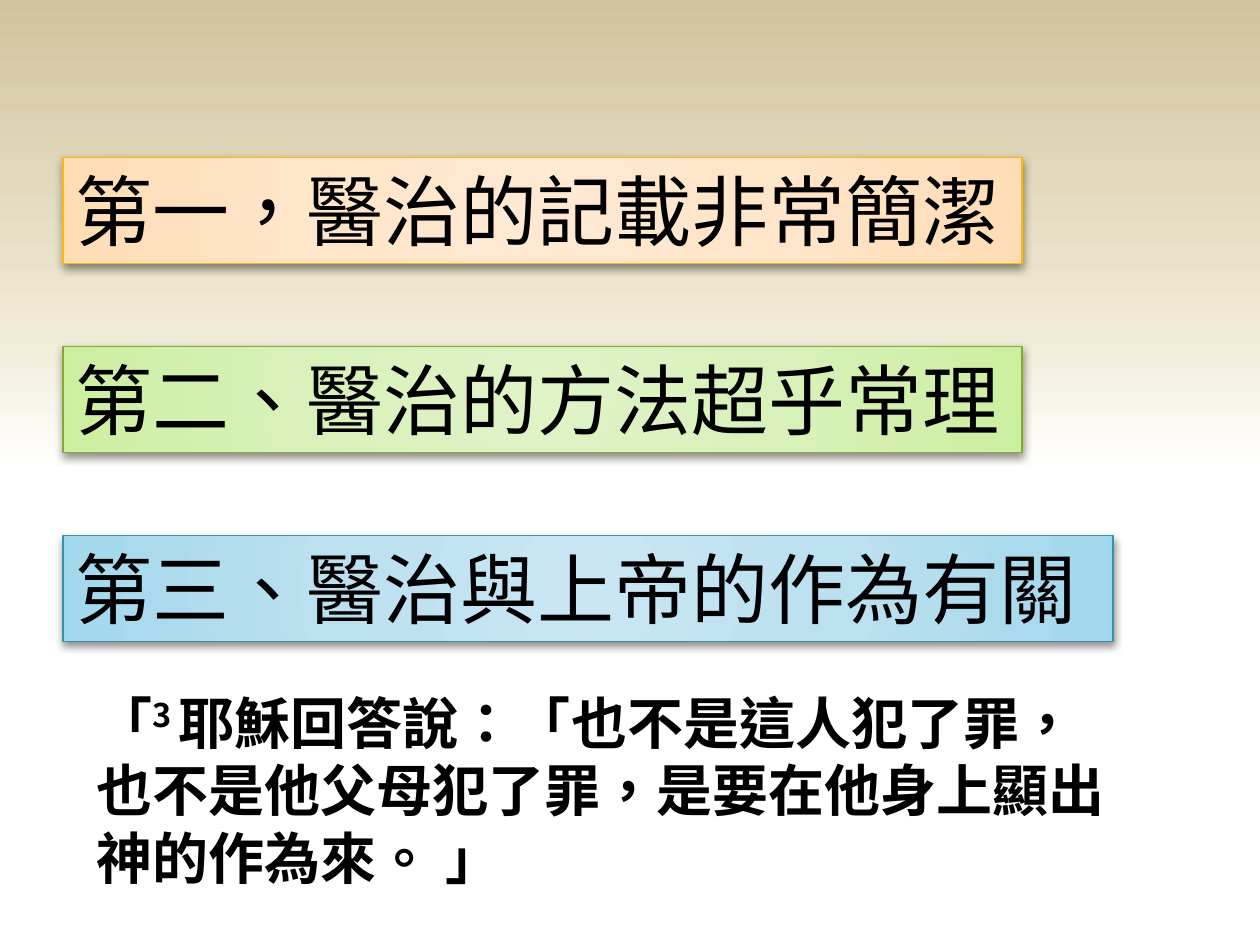
from lxml import etree
from pptx import Presentation
from pptx.dml.color import RGBColor
from pptx.enum import lang, shapes, text
from pptx.oxml import ns
from pptx.util import Pt

BLACK = RGBColor(0x00, 0x00, 0x00)
ORANGE = RGBColor(0xFE, 0xB8, 0x0A)
GREEN = RGBColor(0x84, 0xAA, 0x33)
BLUE = RGBColor(0x38, 0x91, 0xA7)


def shades(*codes):
    return [RGBColor.from_string(code) for code in codes]


SKY = shades("FFFFFF", "F0EBD5", "D1C39F")
PEACH = shades("FFE9D3", "FFE5C9", "FFDDB7", "FFDBB2")
LIME = shades("DFF3C7", "D8F1BA", "CDEFA2", "CAF199")
AQUA = shades("C9E6F2", "BBE0EF", "A4D8ED", "9BD7EE")

LEFT, TOP, STEP, HIGH = 36, 90, 108, 60.5
BARS = [
    ("第一，醫治的記載非常簡潔", 548, False, ORANGE, PEACH),
    ("第二、醫治的方法超乎常理", 548, False, GREEN, LIME),
    ("第三、醫治與上帝的作為有關", 600, True, BLUE, AQUA),
]
VERSE = [
    ("「", 0),
    ("3 ", 30000),
    ("耶穌回答說：「也不是這人犯了罪，也不是他父母犯了罪，是要在他身上顯出神的作為來。 」", 0),
]


def add(parent, tag, **attrs):
    node = etree.SubElement(parent, ns.qn(tag))
    for key, value in attrs.items():
        node.set(key, str(value))
    return node


def blend(owner, fill, spots, hues, angle=None):
    """Fill with a gradient: linear at the angle, else round from the centre."""
    fill.gradient()
    grad = next(owner.iter(ns.qn("a:gradFill")))
    for child in list(grad):
        grad.remove(child)
    stops = add(grad, "a:gsLst")
    for spot, hue in zip(spots, hues):
        stop = add(stops, "a:gs", pos=spot * 1000)
        add(stop, "a:srgbClr", val=hue)
    if angle is not None:
        add(grad, "a:lin", ang=angle * 60000, scaled=0)
    else:
        ring = add(grad, "a:path", path="circle")
        add(ring, "a:fillToRect", l=50000, t=50000, r=50000, b=50000)


def shade(shape):
    """Give the shape a soft shadow straight below it."""
    shape.shadow.inherit = False
    effects = next(shape._element.iter(ns.qn("a:effectLst")))
    drop = add(effects, "a:outerShdw", blurRad=Pt(5), dist=Pt(2),
               dir=90 * 60000, algn="ctr", rotWithShape=0)
    add(add(drop, "a:srgbClr", val=BLACK), "a:alpha", val=43000)


def write(shape, runs, wrap, **style):
    frame = shape.text_frame
    layout = {
        "word_wrap": wrap,
        "auto_size": text.MSO_AUTO_SIZE.SHAPE_TO_FIT_TEXT,
        "vertical_anchor": text.MSO_ANCHOR.TOP,
    }
    for key, value in layout.items():
        setattr(frame, key, value)
    para = frame.paragraphs[0]
    para.alignment = text.PP_ALIGN.LEFT
    style["language_id"] = lang.MSO_LANGUAGE_ID.TRADITIONAL_CHINESE
    for words, base in runs:
        run = para.add_run()
        run.text = words
        run.font.color.rgb = BLACK
        for key, value in style.items():
            setattr(run.font, key, value)
        if base:
            run.font._element.set("baseline", str(base))


def bar(slide, top, words, width, wrap, edge, hues):
    box = slide.shapes.add_shape(shapes.MSO_SHAPE.RECTANGLE,
                                 Pt(LEFT), Pt(top), Pt(width), Pt(HIGH))
    blend(box._element, box.fill, (0, 50, 97, 100), hues)
    box.line.color.rgb = edge
    box.line.width = Pt(0.75)
    shade(box)
    write(box, [(words, 0)], wrap, size=Pt(44), name="Calibri")


def verse(slide):
    box = slide.shapes.add_textbox(Pt(48), Pt(390), Pt(594), Pt(124))
    write(box, VERSE, True, size=Pt(32), name="Noto Sans CJK SC", bold=True)


def main():
    deck = Presentation()
    deck.slide_width, deck.slide_height = Pt(720), Pt(540)
    slide = deck.slides.add_slide(deck.slide_layouts[6])
    blend(slide._element, slide.background.fill, (50, 65, 100), SKY, 270)
    for row, item in enumerate(BARS):
        bar(slide, TOP + row * STEP, *item)
    verse(slide)
    deck.save("out.pptx")


if __name__ == "__main__":
    main()
